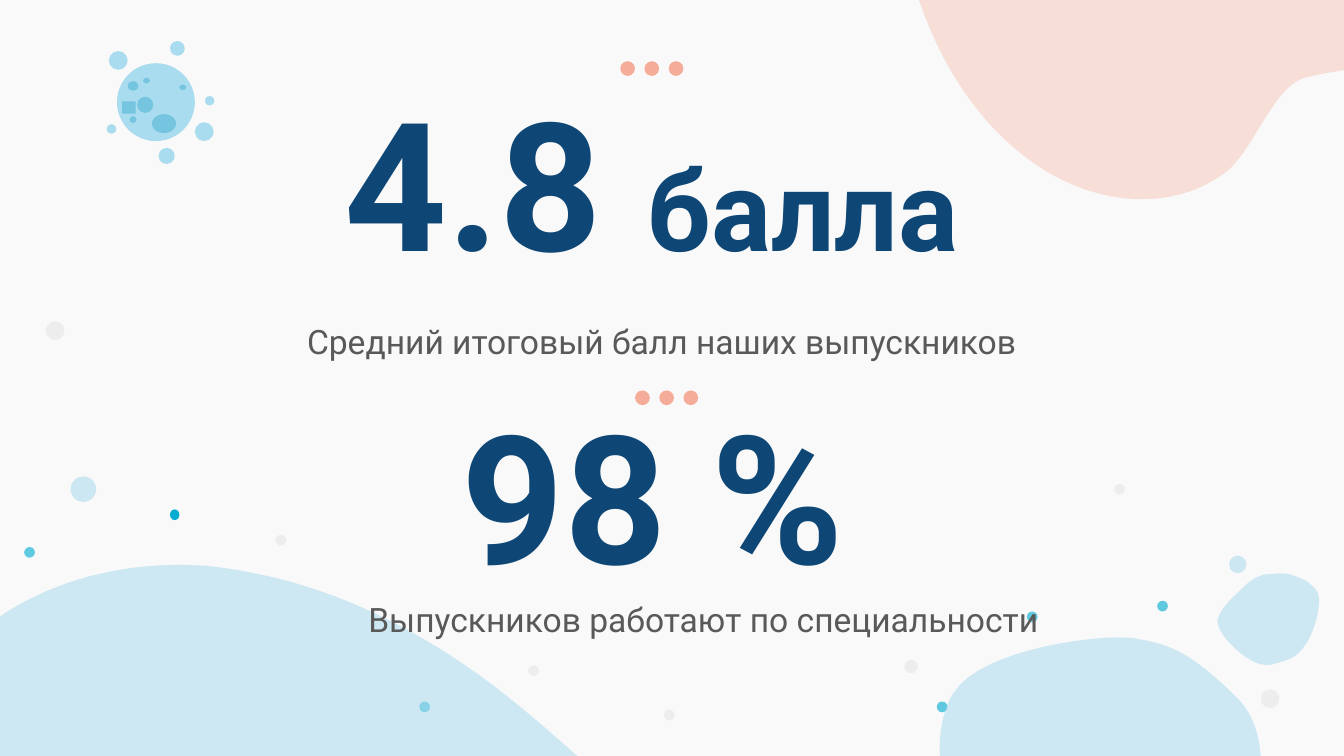
import pptx
import pptx.dml.color
import pptx.enum.shapes
import pptx.enum.text
import pptx.oxml.ns
import pptx.util
from lxml import etree

Inches = pptx.util.Inches
RGBColor = pptx.dml.color.RGBColor
MSO_SHAPE = pptx.enum.shapes.MSO_SHAPE
MSO_ANCHOR = pptx.enum.text.MSO_ANCHOR

BACKGROUND = RGBColor(0xF9, 0xF9, 0xF9)
NAVY = RGBColor(0x0E, 0x47, 0x76)
TEXT_GRAY = RGBColor(0x59, 0x59, 0x59)
PALE_GRAY = RGBColor(0xED, 0xED, 0xED)
CORAL = RGBColor(0xF5, 0xAD, 0x9A)
LIGHT_BLUE = RGBColor(0xAA, 0xDB, 0xEE)
PLANET_BLUE = RGBColor(0xAA, 0xDC, 0xEF)
CRATER_BLUE = RGBColor(0x75, 0xC4, 0xE0)
TEAL = RGBColor(0x02, 0xAC, 0xD0)

FONT = "Roboto"
CURVE_STEPS = 16

# Each blob: start point, then cubic segments (two control points and an end).
# A segment of one point is a straight line.
CORAL_BLOB = ((6.8, -0.12), [
    [(6.91, 0.26), (7.1, 0.63), (7.36, 0.92)],
    [(7.44, 1.01), (7.53, 1.09), (7.63, 1.17)],
    [(8.08, 1.52), (8.69, 1.6), (9.11, 1.29)],
    [(9.31, 1.15), (9.46, 0.68), (9.68, 0.59)],
    [(9.9, 0.5), (10.83, 0.48), (11.22, 0.11)],
    [(11.22, -0.12)],
])
LEFT_HILL = ((5.39, 6.35), [
    [(4.79, 6.13), (4.35, 5.65), (3.86, 5.25)],
    [(3.35, 4.83), (2.76, 4.49), (2.13, 4.32)],
    [(1.93, 4.27), (1.73, 4.23), (1.53, 4.21)],
    [(0.57, 4.14), (-0.35, 4.58), (-0.67, 5.41)],
    [(-0.67, 6.35)],
])
RIGHT_HILL = ((7.01, 5.78), [
    [(7.04, 5.92), (7.09, 6.08), (7.19, 6.25)],
    [(7.3, 6.45), (7.42, 6.67), (7.91, 6.82)],
    [(8.16, 6.89), (8.55, 7.05), (8.91, 6.99)],
    [(9.19, 6.93), (9.47, 6.08), (9.37, 5.54)],
    [(9.35, 5.41), (9.3, 5.3), (9.23, 5.22)],
    [(8.84, 4.82), (8.67, 4.79), (8.44, 4.75)],
    [(8.2, 4.71), (7.3, 4.83), (7.1, 5.15)],
    [(7.02, 5.26), (6.96, 5.49), (7.01, 5.78)],
])
PEBBLE = ((9.64, 4.29), [
    [(9.6, 4.27), (9.55, 4.26), (9.49, 4.27)],
    [(9.42, 4.27), (9.35, 4.27), (9.24, 4.38)],
    [(9.19, 4.43), (9.09, 4.51), (9.06, 4.61)],
    [(9.04, 4.69), (9.22, 4.89), (9.37, 4.94)],
    [(9.41, 4.95), (9.45, 4.95), (9.48, 4.94)],
    [(9.64, 4.9), (9.67, 4.86), (9.71, 4.8)],
    [(9.76, 4.75), (9.85, 4.49), (9.8, 4.4)],
    [(9.77, 4.36), (9.72, 4.31), (9.64, 4.29)],
])

# Dots are (centre x, centre y, width, height).
BLUE_DOTS = [(0.62, 3.64, 0.19, 0.19), (9.21, 4.2, 0.13, 0.13)]
TEAL_DOTS = [(x, y, 0.08, 0.08) for x, y in
             [(0.22, 4.11), (3.16, 5.26), (7.68, 4.59), (7.01, 5.26), (8.65, 4.51)]]
GRAY_DOTS = [(x, y, size, size) for x, y, size in
             [(3.97, 4.99, 0.08), (2.09, 4.02, 0.08), (4.98, 5.32, 0.08),
              (0.41, 2.46, 0.14), (6.78, 4.96, 0.1), (8.33, 3.64, 0.08),
              (9.45, 5.2, 0.14)]]
PLANET_AND_MOONS = [
    (1.16, 0.76, 0.58, 0.58), (1.24, 1.16, 0.12, 0.12), (1.32, 0.36, 0.11, 0.11),
    (1.52, 0.98, 0.14, 0.14), (0.88, 0.45, 0.14, 0.14), (0.83, 0.96, 0.07, 0.07),
    (1.56, 0.75, 0.07, 0.07)]
CRATERS = [
    (0.99, 0.89, 0.05, 0.05), (1.08, 0.78, 0.12, 0.12), (1.22, 0.92, 0.18, 0.14),
    (0.99, 0.64, 0.08, 0.07), (1.36, 0.65, 0.05, 0.04), (1.09, 0.6, 0.05, 0.04)]


def style_shape(shape, color, opacity):
    shape.shadow.inherit = False
    shape.line.fill.background()
    shape.fill.solid()
    shape.fill.fore_color.rgb = color
    if opacity < 100:
        color_element = shape.fill._xPr.find(".//" + pptx.oxml.ns.qn("a:srgbClr"))
        alpha = etree.SubElement(color_element, pptx.oxml.ns.qn("a:alpha"))
        alpha.set("val", str(opacity * 1000))


def add_dots(slide, dots, color, opacity=100, kind=MSO_SHAPE.OVAL):
    for x, y, width, height in dots:
        shape = slide.shapes.add_shape(
            kind, Inches(x - width / 2), Inches(y - height / 2),
            Inches(width), Inches(height))
        style_shape(shape, color, opacity)


def curve_points(start, first, second, end):
    """Return points along a cubic curve, without its start."""
    points = []
    for step in range(1, CURVE_STEPS + 1):
        t = step / CURVE_STEPS
        weights = ((1 - t) ** 3, 3 * t * (1 - t) ** 2, 3 * t * t * (1 - t), t ** 3)
        points.append(tuple(
            sum(weight * value for weight, value in zip(weights, values))
            for values in zip(start, first, second, end)))
    return points


def add_blob(slide, outline, color, opacity):
    start, segments = outline
    points = [start]
    for segment in segments:
        points += segment if len(segment) == 1 else curve_points(points[-1], *segment)
    vertices = [(Inches(x), Inches(y)) for x, y in points]
    builder = slide.shapes.build_freeform(*vertices[0])
    builder.add_line_segments(vertices[1:], close=True)
    style_shape(builder.convert_to_shape(), color, opacity)


def add_ellipsis(slide, x, y):
    """Draw three equal dots in a row from the centre of the first."""
    add_dots(slide, [(x + 0.18 * index, y, 0.11, 0.11) for index in range(3)], CORAL)


def place(shape, left, top, width, height):
    shape.left, shape.top = Inches(left), Inches(top)
    shape.width, shape.height = Inches(width), Inches(height)


def write_text(shape, runs, *, color, bold=False, anchor=MSO_ANCHOR.TOP, space_after=0):
    """Fill a shape with one centred paragraph of (text, size) runs."""
    frame = shape.text_frame
    frame.word_wrap = True
    frame.auto_size = pptx.enum.text.MSO_AUTO_SIZE.NONE
    frame.vertical_anchor = anchor
    frame.margin_left = frame.margin_right = Inches(0.1)
    frame.margin_top = frame.margin_bottom = Inches(0.1)
    paragraph = frame.paragraphs[0]
    paragraph.alignment = pptx.enum.text.PP_ALIGN.CENTER
    paragraph.space_before = pptx.util.Pt(0)
    paragraph.space_after = pptx.util.Pt(space_after)
    for text, size in runs:
        run = paragraph.add_run()
        run.text = text
        run.font.name = FONT
        run.font.size = pptx.util.Pt(size)
        run.font.bold = bold
        run.font.color.rgb = color


def add_text_box(slide, box, runs, **text_format):
    shape = slide.shapes.add_textbox(*(Inches(value) for value in box))
    write_text(shape, runs, **text_format)


def add_decoration(slide):
    add_blob(slide, CORAL_BLOB, CORAL, 34)
    add_dots(slide, BLUE_DOTS, LIGHT_BLUE, 57)
    add_dots(slide, TEAL_DOTS, TEAL, 62)
    add_dots(slide, GRAY_DOTS, PALE_GRAY)
    add_dots(slide, [(1.3, 3.83, 0.07, 0.08)], TEAL)
    for outline in (LEFT_HILL, RIGHT_HILL, PEBBLE):
        add_blob(slide, outline, LIGHT_BLUE, 54)
    add_dots(slide, PLANET_AND_MOONS, PLANET_BLUE)
    add_dots(slide, [(0.96, 0.8, 0.1, 0.09)], CRATER_BLUE, kind=MSO_SHAPE.RECTANGLE)
    add_dots(slide, CRATERS, CRATER_BLUE)


def main():
    presentation = pptx.Presentation()
    presentation.slide_width = Inches(10)
    presentation.slide_height = Inches(10 * 9 / 16)
    slide = presentation.slides.add_slide(presentation.slide_layouts[5])
    slide.background.fill.solid()
    slide.background.fill.fore_color.rgb = BACKGROUND

    add_decoration(slide)
    add_ellipsis(slide, 4.67, 0.51)
    add_ellipsis(slide, 4.78, 2.96)

    figure_format = {"color": NAVY, "bold": True, "anchor": MSO_ANCHOR.BOTTOM}
    caption_format = {"color": TEXT_GRAY, "space_after": 16}
    title = slide.shapes.title
    place(title, 2.09, 1.16, 5.52, 1.08)
    write_text(title, [("4.8 ", 96), ("балла", 60)], **figure_format)
    add_text_box(slide, (0.71, 2.29, 8.43, 0.42),
                 [("Средний итоговый балл наших выпускников", 18)], **caption_format)
    add_text_box(slide, (1.73, 3.43, 6.59, 1.14), [("98 % ", 96)], **figure_format)
    add_text_box(slide, (1.02, 4.36, 8.43, 0.42),
                 [("Выпускников работают по специальности", 18)], **caption_format)

    presentation.save("out.pptx")


if __name__ == "__main__":
    main()
